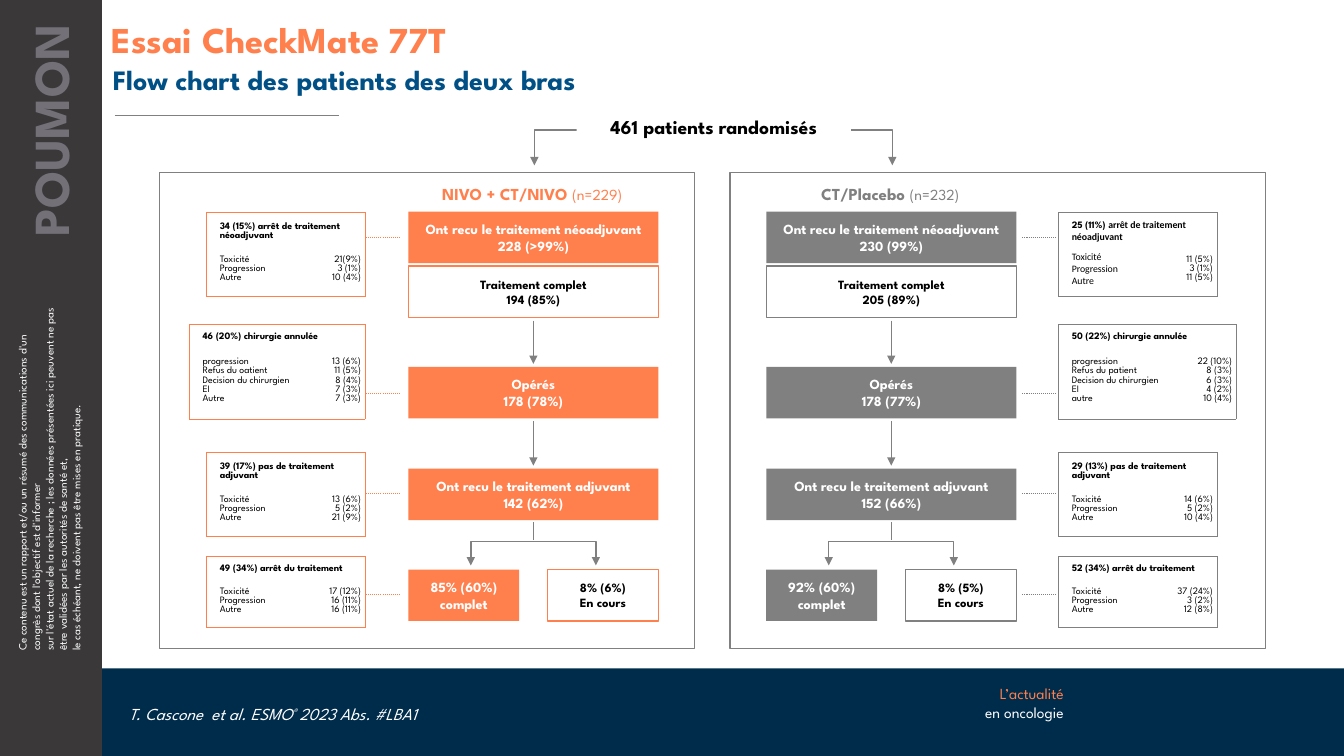
from pptx import Presentation
from pptx.dml.color import RGBColor
from pptx.enum.dml import MSO_LINE
from pptx.enum.shapes import MSO_CONNECTOR, MSO_SHAPE as SHAPE
from pptx.enum.text import MSO_ANCHOR as ANCHOR, PP_ALIGN as ALIGN
from pptx.oxml.ns import qn
from pptx.util import Inches, Pt
from lxml.etree import SubElement


class Theme:
    font = "League Spartan"
    orange, gray, white, black = "FF7F4D", "808080", "FFFFFF", "000000"
    navy, blue, charcoal, ash = "002C4C", "005086", "3A3839", "737078"
    title = dict(size=Pt(26), bold=True)
    subtitle = dict(size=Pt(20), bold=True)
    section = dict(size=Pt(36), bold=True)
    total = dict(size=Pt(14), bold=True)
    arm = dict(size=Pt(12), bold=True)
    count = dict(size=Pt(11), bold=False)
    step = dict(size=Pt(10), bold=True)
    substep = dict(size=Pt(9), bold=True)
    citation = dict(size=Pt(12), italic=True)
    notice = dict(size=Pt(8))
    label = dict(size=Pt(7), bold=True)
    value = dict(size=Pt(7), bold=False)
    plain_label = dict(label, name="Calibri")
    plain_value = dict(value, name="Calibri")


def rgb(colour):
    return RGBColor.from_string(colour)


class FlowSlide:
    def __init__(self, deck, theme):
        self.theme = theme
        self.page = deck.slides.add_slide(deck.slide_layouts[6])

    def fill_text(self, frame, paragraphs, align=ALIGN.LEFT, **layout):
        """Fill a text frame; each paragraph is a list of (text, format, colour)."""
        for index, spans in enumerate(paragraphs):
            para = frame.add_paragraph() if index else frame.paragraphs[0]
            for name, setting in dict(layout, alignment=align).items():
                setattr(para, name, setting)
            for text, style, colour in spans:
                for part, line in enumerate(text.split("\n")):
                    if part:
                        para.add_line_break()
                    if line:
                        self.add_span(para, line, style, colour)

    def add_span(self, para, text, style, colour):
        span = para.add_run()
        span.text = text
        for name, setting in {"name": self.theme.font, **style}.items():
            if name == "baseline":
                span._r.get_or_add_rPr().set(name, setting)
            else:
                setattr(span.font, name, setting)
        span.font.color.rgb = rgb(colour)

    def set_frame(self, frame, anchor, insets):
        frame.word_wrap = True
        frame.vertical_anchor = anchor
        for side, inset in zip(("left", "top", "right", "bottom"), insets):
            setattr(frame, f"margin_{side}", Inches(inset))

    def text(self, at, spans, align=ALIGN.LEFT, anchor=ANCHOR.TOP,
             insets=(0.1, 0.05, 0.1, 0.05), rotation=0, **layout):
        box = self.page.shapes.add_textbox(*map(Inches, at))
        box.rotation = rotation
        self.set_frame(box.text_frame, anchor, insets)
        self.fill_text(box.text_frame, [spans], align, **layout)

    def shape(self, at, kind=SHAPE.RECTANGLE, fill=None, line=None, width=1):
        box = self.page.shapes.add_shape(kind, *map(Inches, at))
        box.shadow.inherit = False
        for part, colour in ((box.fill, fill), (box.line.fill, line)):
            if colour:
                part.solid()
                part.fore_color.rgb = rgb(colour)
            else:
                part.background()
        if line:
            box.line.width = Pt(width)
        return box

    def step(self, at, lines, fill, line=None):
        """Draw a flow box: filled with white text, or outlined with black text."""
        theme = self.theme
        style, colour, inset = ((theme.substep, theme.black, 0.08) if line
                                else (theme.step, theme.white, 0.04))
        frame = self.shape(at, fill=fill, line=line).text_frame
        self.set_frame(frame, ANCHOR.MIDDLE, [inset] * 4)
        self.fill_text(frame, [[(text, style, colour)] for text in lines], ALIGN.CENTER)

    def fork(self, at):
        """Draw a bracket turned to open downwards, with an arrow on each leg."""
        bracket = self.shape(at, SHAPE.LEFT_BRACKET, line=self.theme.gray)
        bracket.adjustments[0] = 0
        bracket.rotation = 90
        for end in ("a:headEnd", "a:tailEnd"):
            SubElement(bracket.line._get_or_add_ln(), qn(end), type="triangle")

    def line(self, start, end, colour, width=1, dash=None, arrow=False):
        link = self.page.shapes.add_connector(MSO_CONNECTOR.STRAIGHT, *map(Inches, start + end))
        link.line.color.rgb = rgb(colour)
        link.line.width = Pt(width)
        if dash:
            link.line.dash_style = dash
        if arrow:
            SubElement(link.line._get_or_add_ln(), qn("a:tailEnd"), type="triangle")
        SubElement(link._element.spPr, qn("a:effectLst"))

    def border(self, cell, sides, colour):
        """Outline the given sides of a cell and clear the other ones."""
        properties = cell._tc.get_or_add_tcPr()
        for index, side in enumerate("LRTB"):
            edge = properties.makeelement(qn(f"a:ln{side}"), {"w": str(Pt(0.5))})
            properties.insert(index, edge)
            if side in sides:
                SubElement(SubElement(edge, qn("a:solidFill")), qn("a:srgbClr"), val=colour)
            else:
                SubElement(edge, qn("a:noFill"))

    def dropouts(self, colour, at, columns, header_height, header, rows, plain=False):
        """Draw a table of dropouts; plain uses the fallback font for its labels."""
        theme = self.theme
        table = self.page.shapes.add_table(2, 2, *map(Inches, at)).table
        table.first_row = table.horz_banding = False
        for column, width in zip(table.columns, columns):
            column.width = Inches(width)
        for row, height in zip(table.rows, (header_height, at[3] - header_height)):
            row.height = Inches(height)
        heading, spanned, labels, values = (table.cell(row, column)
                                            for row in (0, 1) for column in (0, 1))
        heading.merge(spanned)
        wide, tight = (0.13, 0.07, 0.13, 0.07), (0.04, 0, 0.04, 0.08)
        for cell, sides, insets in ((heading, "LTR", wide), (spanned, "TR", wide),
                                    (labels, "LB", tight), (values, "RB", tight)):
            cell.fill.solid()
            cell.fill.fore_color.rgb = rgb(theme.white)
            self.set_frame(cell, ANCHOR.MIDDLE, insets)
            self.border(cell, sides, colour)
        number, reason = header.split(") ")
        self.fill_text(heading.text_frame, [[
            (number + ") ", theme.label, theme.black),
            (reason, theme.plain_label if plain else theme.label, theme.black)]])
        style = theme.plain_value if plain else theme.value
        self.fill_text(labels.text_frame, [[(name, style, theme.black)] for name, _ in rows])
        for para in labels.text_frame.paragraphs:
            for name, indent in (("marL", 0.1), ("indent", -0.01)):
                para._p.get_or_add_pPr().set(name, str(Inches(indent)))
        self.fill_text(values.text_frame,
                       [[(count, theme.value, theme.black)] for _, count in rows], ALIGN.RIGHT)

    def arm(self, colour, frame_left, left, link_left, title, size, steps):
        """Draw one study arm: frame, heading, flow boxes, arrows and dotted links."""
        theme = self.theme
        self.shape((frame_left, 1.71, 5.31, 4.72), line=theme.gray, width=0.75)
        self.text((left - 0.1, 1.74, 2.66, 0.37),
                  [(title, theme.arm, colour), (size, theme.count, colour)],
                  ALIGN.CENTER, insets=[0.08] * 4)
        places = ((0, 2.1, 2.48), (0, 2.64, 2.48), (0, 3.64, 2.48),
                  (0, 4.65, 2.48), (0, 5.65, 1.1), (1.38, 5.65, 1.1))
        for index, ((shift, top, width), lines) in enumerate(zip(places, steps)):
            colours = (theme.white, colour) if index in (1, 5) else (colour,)
            self.step((left + shift, top, width, 0.51), lines, *colours)
        middle = left + 1.24
        for top, bottom, arrow in ((3.18, 3.61, True), (4.18, 4.62, True), (5.18, 5.36, False)):
            self.line((middle, top), (middle, bottom), theme.gray, arrow=arrow)
        self.fork((middle - 0.12, 4.87, 0.24, 1.24))
        for top in (2.36, 3.9, 4.9, 5.9):
            self.line((link_left, top), (link_left + 0.34, top), colour, 0.75, MSO_LINE.ROUND_DOT)


def main():
    deck = Presentation()
    deck.slide_width, deck.slide_height = Inches(13.33), Inches(7.5)
    theme = Theme()
    slide = FlowSlide(deck, theme)
    slide.shape((1.01, 6.63, 12.32, 0.87), fill=theme.navy)
    slide.shape((0, 0, 1.01, 7.5), fill=theme.charcoal)
    notice = ("Ce contenu est un rapport et/ou un résumé des communications d'un congrès dont "
              "l'objectif est d'informer \nsur l'état actuel de la recherche ; les données "
              "présentées ici peuvent ne pas être validées par les autorités de santé et, \n"
              "le cas échéant, ne doivent pas être mises en pratique.")
    slide.text((-1.31, 4.37, 3.6, 0.77), [(notice, theme.notice, theme.white)], rotation=270)
    slide.text((9.01, 6.74, 1.64, 0.47), [("L’actualité\n", theme.count, theme.orange),
               ("en oncologie", theme.count, theme.white)], ALIGN.RIGHT)
    slide.text((-1.04, 1.18, 3.07, 0.71), [("POUMON", theme.section, theme.ash)],
               ALIGN.RIGHT, insets=(0.1, 0.05, 0.24, 0.05), rotation=270)
    slide.line((1.14, 1.15), (3.36, 1.15), theme.gray, 0.75)
    slide.text((1.02, 0.57, 12.31, 0.5),
               [("Flow chart des patients des deux bras", theme.subtitle, theme.blue)])
    slide.text((1.01, 0.17, 12.18, 0.4),
               [("Essai CheckMate 77T", theme.title, theme.orange)], line_spacing=0.9)
    citation = (("T. Cascone  et al. ESMO", {}), ("® ", {"baseline": "30000"}),
                ("2023 Abs. #LBA1", {}))
    slide.text((1.18, 6.66, 7.52, 0.84), [(text, {**theme.citation, **extra}, theme.white)
               for text, extra in citation], anchor=ANCHOR.MIDDLE)
    slide.fork((6.9, -0.31, 0.35, 3.55))
    slide.shape((5.72, 1.06, 2.72, 0.4), fill=theme.white)
    slide.text((5.72, 1.06, 2.72, 0.4), [("461 patients randomisés", theme.total, theme.black)],
               ALIGN.CENTER, insets=[0.08] * 4)
    usual = ("Toxicité", "Progression", "Autre")
    surgery = ("Decision du chirurgien", "EI")
    arms = (
        ((theme.orange, 1.58, 4.05, 3.63, "NIVO + CT/NIVO ", "(n=229)"),
         ("228 (>99%)", "194 (85%)", "178 (78%)", "142 (62%)", "85% (60%)", "8% (6%)"),
         (2.05, 1.88), (1.22, 0.52), ("34 (15%)", "46 (20%)", "39 (17%)", "49 (34%)"),
         ("progression", "Refus du oatient", *surgery, "Autre"),
         (("21(9%)", "3 (1%)", "10 (4%)"), ("13 (6%)", "11 (5%)", "8 (4%)", "7 (3%)", "7 (3%)"),
          ("13 (6%)", "5 (2%)", "21 (9%)"), ("17 (12%)", "16 (11%)", "16 (11%)"))),
        ((theme.gray, 7.24, 7.6, 10.14, "CT/Placebo ", "(n=232)"),
         ("230 (99%)", "205 (89%)", "178 (77%)", "152 (66%)", "92% (60%)", "8% (5%)"),
         (10.5, 10.5), (1.23, 0.53), ("25 (11%)", "50 (22%)", "29 (13%)", "52 (34%)"),
         ("progression", "Refus du patient", *surgery, "autre"),
         (("11 (5%)", "3 (1%)", "11 (5%)"), ("22 (10%)", "8 (3%)", "6 (3%)", "4 (2%)", "10 (4%)"),
          ("14 (6%)", "5 (2%)", "10 (4%)"), ("37 (24%)", "3 (2%)", "12 (8%)"))))
    reasons = ((2.11, 0.8, 0.34, "arrêt de traitement néoadjuvant"),
               (3.22, 0.91, 0.23, "chirurgie annulée"),
               (4.49, 0.8, 0.34, "pas de traitement adjuvant"),
               (5.52, 0.68, 0.23, "arrêt du traitement"))
    for outline, results, lefts, wide_columns, totals, surgery_names, counts in arms:
        first, complete, operated, adjuvant, finished, ongoing = results
        slide.arm(*outline, (
            [f"Ont recu le traitement néoadjuvant {first}"], ["Traitement complet", complete],
            ["Opérés", operated], ["Ont recu le traitement adjuvant", adjuvant],
            [finished, "complet"], [ongoing, "En cours"]))
        for index, (top, height, header_height, reason) in enumerate(reasons):
            is_surgery = index == 1
            columns = wide_columns if is_surgery else (1.1, 0.47)
            slide.dropouts(outline[0], (lefts[is_surgery], top, sum(columns), height), columns,
                           header_height, f"{totals[index]} {reason}",
                           list(zip(surgery_names if is_surgery else usual, counts[index])),
                           plain=outline[0] == theme.gray and index == 0)
    deck.save("out.pptx")


if __name__ == "__main__":
    main()
